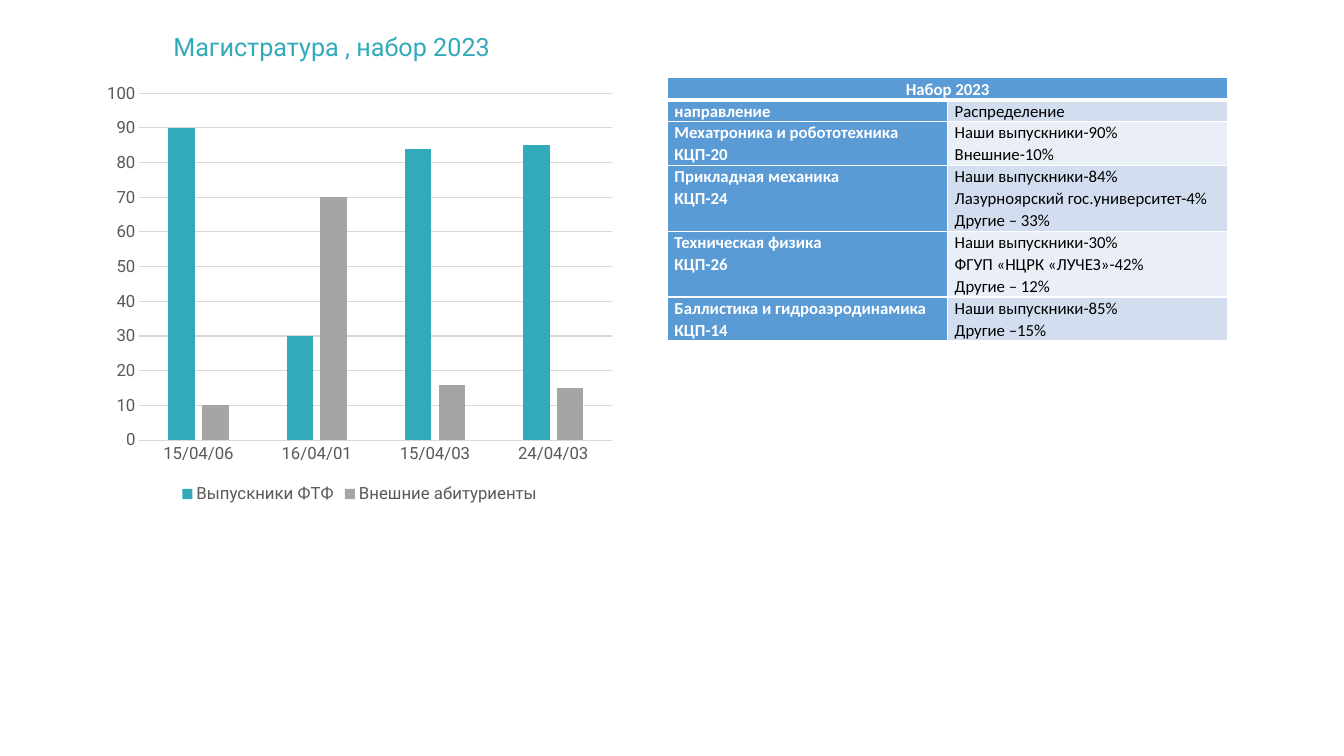
from lxml import etree
from pptx import Presentation
from pptx.chart.data import CategoryChartData
from pptx.dml.color import RGBColor
from pptx.enum import chart as ch, text
from pptx.oxml.ns import qn
from pptx.util import Pt

TEAL = RGBColor(0x32, 0xAA, 0xBA)
GRAY = RGBColor(0xA5, 0xA5, 0xA5)
GRID = RGBColor(0xD9, 0xD9, 0xD9)
LABEL = RGBColor(0x59, 0x59, 0x59)
BLUE = RGBColor(0x5B, 0x9B, 0xD5)
BAND_DARK = RGBColor(0xD2, 0xDE, 0xEF)
BAND_LIGHT = RGBColor(0xEA, 0xEF, 0xF7)
WHITE = RGBColor(0xFF, 0xFF, 0xFF)
BLACK = RGBColor(0, 0, 0)

DATES = ["15/04/06", "16/04/01", "15/04/03", "24/04/03"]
SERIES = [
    ("Выпускники ФТФ", [90, 30, 84, 85], TEAL),
    ("Внешние абитуриенты", [10, 70, 16, 15], GRAY),
]
ROWS = [
    (["Набор 2023"], []),
    (["направление"], ["Распределение"]),
    (["Мехатроника и робототехника", "КЦП-20"],
     ["Наши выпускники-90%", "Внешние-10%"]),
    (["Прикладная механика", "КЦП-24"],
     ["Наши выпускники-84%", "Лазурноярский гос.университет-4%", "Другие – 33%"]),
    (["Техническая физика", "КЦП-26"],
     ["Наши выпускники-30%", "ФГУП «НЦРК «ЛУЧЕЗ»-42%", "Другие – 12%"]),
    (["Баллистика и гидроаэродинамика", "КЦП-14"],
     ["Наши выпускники-85%", "Другие –15%"]),
]
LINE_HEIGHT = 15.4


def apply(target, **values):
    for name, value in values.items():
        setattr(target, name, value)


def style_font(font, color, size=12, name="Roboto", bold=False):
    apply(font, size=Pt(size), name=name, bold=bold)
    font.color.rgb = color


def add_title(slide, left, top, width, height):
    title = slide.shapes.title
    apply(title, left=Pt(left), top=Pt(top), width=Pt(width), height=Pt(height))
    frame = title.text_frame
    apply(frame, word_wrap=True, auto_size=text.MSO_AUTO_SIZE.NONE,
          vertical_anchor=text.MSO_ANCHOR.TOP)
    para = frame.paragraphs[0]
    para.alignment = text.PP_ALIGN.CENTER
    span = para.add_run()
    span.text = "Магистратура , набор 2023"
    style_font(span.font, TEAL, 18)


def add_intake_chart(slide, left, top, width, height):
    data = CategoryChartData()
    data.categories = DATES
    for name, values, _ in SERIES:
        data.add_series(name, values)
    chart = slide.shapes.add_chart(
        ch.XL_CHART_TYPE.COLUMN_CLUSTERED,
        Pt(left), Pt(top), Pt(width), Pt(height), data).chart
    apply(chart, has_title=False, has_legend=True)
    style_font(chart.font, BLACK, 10)

    # Columns
    plot = chart.plots[0]
    apply(plot, gap_width=219, overlap=-27, vary_by_categories=False)
    for series, (_, _, color) in zip(plot.series, SERIES):
        series.format.fill.solid()
        series.format.fill.fore_color.rgb = color

    # Axes and grid
    values, dates = chart.value_axis, chart.category_axis
    for axis in (values, dates):
        apply(axis, major_tick_mark=ch.XL_TICK_MARK.NONE,
              minor_tick_mark=ch.XL_TICK_MARK.NONE)
        style_font(axis.tick_labels.font, LABEL)
    apply(values, minimum_scale=0, maximum_scale=100, major_unit=10,
          has_major_gridlines=True)
    values.format.line.fill.background()
    for line in (values.major_gridlines.format.line, dates.format.line):
        line.width = Pt(0.75)
        line.color.rgb = GRID

    # Legend
    apply(chart.legend, position=ch.XL_LEGEND_POSITION.BOTTOM,
          include_in_layout=False)
    style_font(chart.legend.font, LABEL)


def add_borders(cell, top, bottom):
    props = cell._tc.get_or_add_tcPr()
    sides = {"a:lnL": 1, "a:lnR": 1, "a:lnT": top, "a:lnB": bottom}
    for index, (tag, width) in enumerate(sides.items()):
        line = etree.Element(qn(tag), w=str(Pt(width)))
        fill = etree.SubElement(line, qn("a:solidFill"))
        etree.SubElement(fill, qn("a:srgbClr"), val=str(WHITE))
        props.insert(index, line)


def fill_cell(cell, lines, fill, color, bold, align):
    apply(cell, margin_left=Pt(5), margin_right=Pt(5), margin_top=0, margin_bottom=0)
    cell.fill.solid()
    cell.fill.fore_color.rgb = fill
    cell.text = "\n".join(lines)
    for para in cell.text_frame.paragraphs:
        apply(para, line_spacing=1.07, alignment=align)
        style_font(para.font, color, 12, "Calibri", bold)
        for span in para.runs:
            style_font(span.font, color, 12, "Calibri", bold)


def add_intake_table(slide, left, top, width):
    heights = [LINE_HEIGHT * max(map(len, row)) for row in ROWS]
    table = slide.shapes.add_table(
        len(ROWS), 2, Pt(left), Pt(top), Pt(width), Pt(sum(heights))).table
    apply(table, first_row=False, horz_banding=False)
    table.cell(0, 0).merge(table.cell(0, 1))
    for column in table.columns:
        column.width = Pt(width / 2)
    for index, (lines, height) in enumerate(zip(ROWS, heights)):
        table.rows[index].height = Pt(height)
        band = BAND_DARK if index % 2 else BAND_LIGHT
        align = text.PP_ALIGN.LEFT if index else text.PP_ALIGN.CENTER
        looks = [(BLUE, WHITE, True), (band, BLACK, False)]
        for column, (fill, color, bold) in enumerate(looks):
            cell = table.cell(index, column)
            fill_cell(cell, lines[column], fill, color, bold, align)
            add_borders(cell, top=3 if index == 1 else 1, bottom=1 if index else 3)


def main():
    deck = Presentation()
    apply(deck, slide_width=Pt(960), slide_height=Pt(540))
    slide = deck.slides.add_slide(deck.slide_layouts[5])
    add_title(slide, 44, 18.7, 386, 29)
    add_intake_chart(slide, 69, 53.3, 376, 309.6)
    add_intake_table(slide, 476.8, 55.5, 400.4)
    deck.save("out.pptx")


if __name__ == "__main__":
    main()
